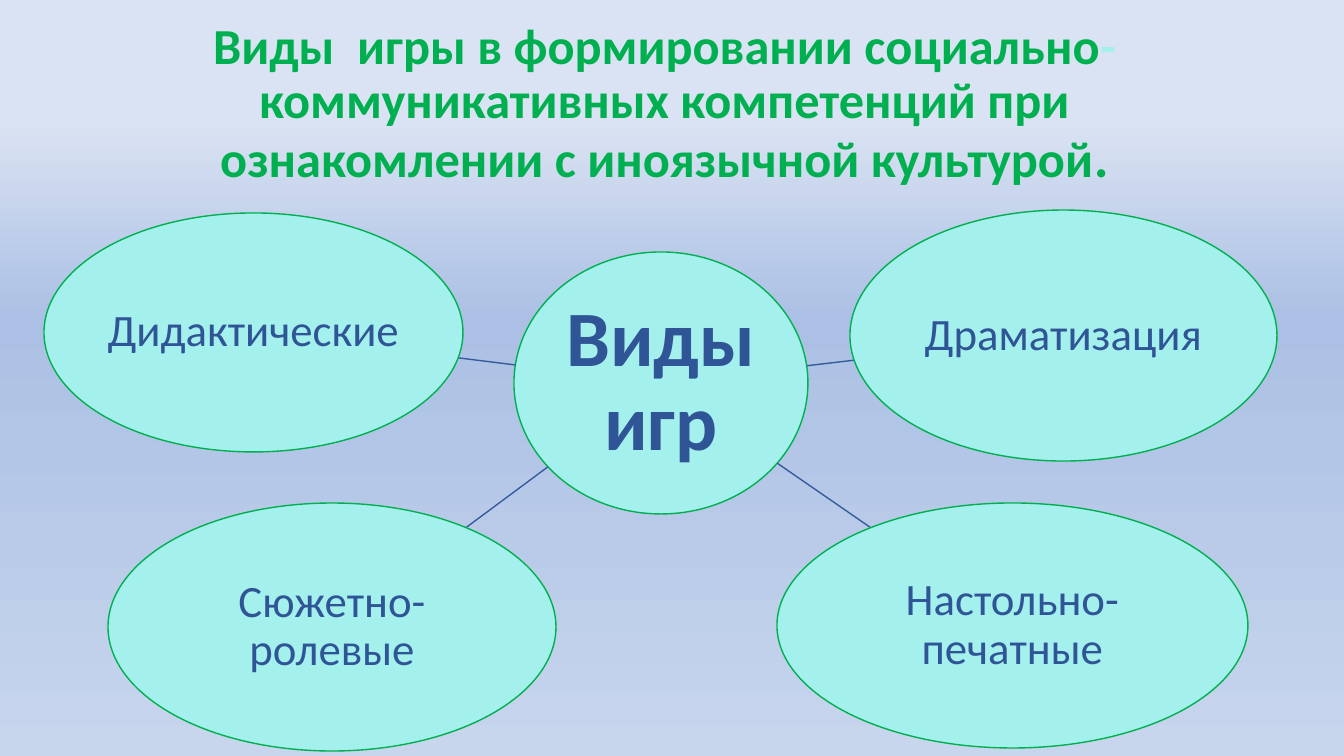
from copy import deepcopy
from math import hypot

from pptx import Presentation
from pptx.dml.color import RGBColor
from pptx.enum.shapes import MSO_CONNECTOR as Link, MSO_SHAPE as Form
from pptx.enum.text import MSO_ANCHOR as Anchor, PP_ALIGN as Align
from pptx.oxml.ns import qn
from pptx.util import Pt

PX = 12192000 / 1344
GREEN = RGBColor(0x00, 0xB0, 0x50)
AQUA = RGBColor(0xA4, 0xF0, 0xEC)
NAVY = RGBColor(0x2F, 0x55, 0x97)
BLUE = RGBColor(0x36, 0x5B, 0x9D)
SKY = [(0.16, RGBColor(0xDA, 0xE3, 0xF3)),
       (0.42, RGBColor(0xAB, 0xC0, 0xE4)),
       (1, RGBColor(0xC7, 0xD5, 0xED))]

TITLE = [("Виды  игры в формировании социально", GREEN, 36),
         ("-", AQUA, 36),
         ("коммуникативных компетенций при ознакомлении "
          "с иноязычной культурой", GREEN, 36),
         (".", GREEN, 39.6)]
HUB = ("Виды игр", (514, 252, 294, 262))
KINDS = [("Драматизация", (850, 210, 427, 251)),
         ("Настольно-печатные", (777, 503, 471, 245)),
         ("Сюжетно-ролевые", (108, 503, 448, 248)),
         ("Дидактические", (44, 213, 419, 239))]


def emu(*nums):
    return [round(n * PX) for n in nums]


def style(obj, **vals):
    for key, val in vals.items():
        setattr(obj, key, val)


def write(para, text, color, size, bold):
    run = para.add_run()
    run.text = text
    style(run.font, name="Calibri", size=Pt(size), bold=bold)
    run.font.color.rgb = color


def paint_back(slide):
    fill = slide.background.fill
    fill.gradient()
    fill.gradient_angle = 270
    stops = slide.element.find(".//" + qn("a:gsLst"))
    stops.append(deepcopy(stops[-1]))
    for stop, (pos, color) in zip(fill.gradient_stops, SKY):
        stop.position = pos
        stop.color.rgb = color


def add_title(slide, box):
    title = slide.shapes.title
    style(title, **dict(zip(("left", "top", "width", "height"), emu(*box))))
    style(title.text_frame, word_wrap=True, vertical_anchor=Anchor.MIDDLE)
    para = title.text_frame.paragraphs[0]
    style(para, alignment=Align.CENTER, line_spacing=0.9)
    for text, color, size in TITLE:
        write(para, text, color, size, True)


def add_oval(slide, text, box, size, bold, inset):
    oval = slide.shapes.add_shape(Form.OVAL, *emu(*box))
    oval.shadow.inherit = False
    oval.fill.solid()
    oval.fill.fore_color.rgb = AQUA
    oval.line.color.rgb = GREEN
    oval.line.width = Pt(1)
    pad = emu(inset)[0]
    style(oval.text_frame, word_wrap=True, vertical_anchor=Anchor.MIDDLE,
          margin_left=pad, margin_right=pad, margin_top=pad, margin_bottom=pad)
    para = oval.text_frame.paragraphs[0]
    style(para, alignment=Align.CENTER, line_spacing=0.9)
    write(para, text, NAVY, size, bold)


def rim(box, goal):
    """Point where the line between two oval centres leaves the first oval."""
    (x, y), (gx, gy) = [(l + w / 2, t + h / 2) for l, t, w, h in (box, goal)]
    dx, dy = gx - x, gy - y
    part = 1 / hypot(dx / (box[2] / 2), dy / (box[3] / 2))
    return x + dx * part, y + dy * part


def add_spoke(slide, hub, box):
    ends = emu(*rim(hub, box), *rim(box, hub))
    spoke = slide.shapes.add_connector(Link.STRAIGHT, *ends)
    spoke.line.color.rgb = BLUE
    spoke.line.width = Pt(1)
    props = spoke.element.spPr
    props.append(props.makeelement(qn("a:effectLst"), {}))


def add_web(slide):
    text, hub = HUB
    add_oval(slide, text, hub, 56, True, 4)
    for text, box in KINDS:
        add_spoke(slide, hub, box)
        add_oval(slide, text, box, 32, False, 2)


def main():
    deck = Presentation()
    deck.slide_width, deck.slide_height = emu(1344, 756)
    slide = deck.slides.add_slide(deck.slide_layouts[5])
    paint_back(slide)
    add_title(slide, (85, 32, 1159, 146))
    add_web(slide)
    deck.save("out.pptx")


if __name__ == "__main__":
    main()
